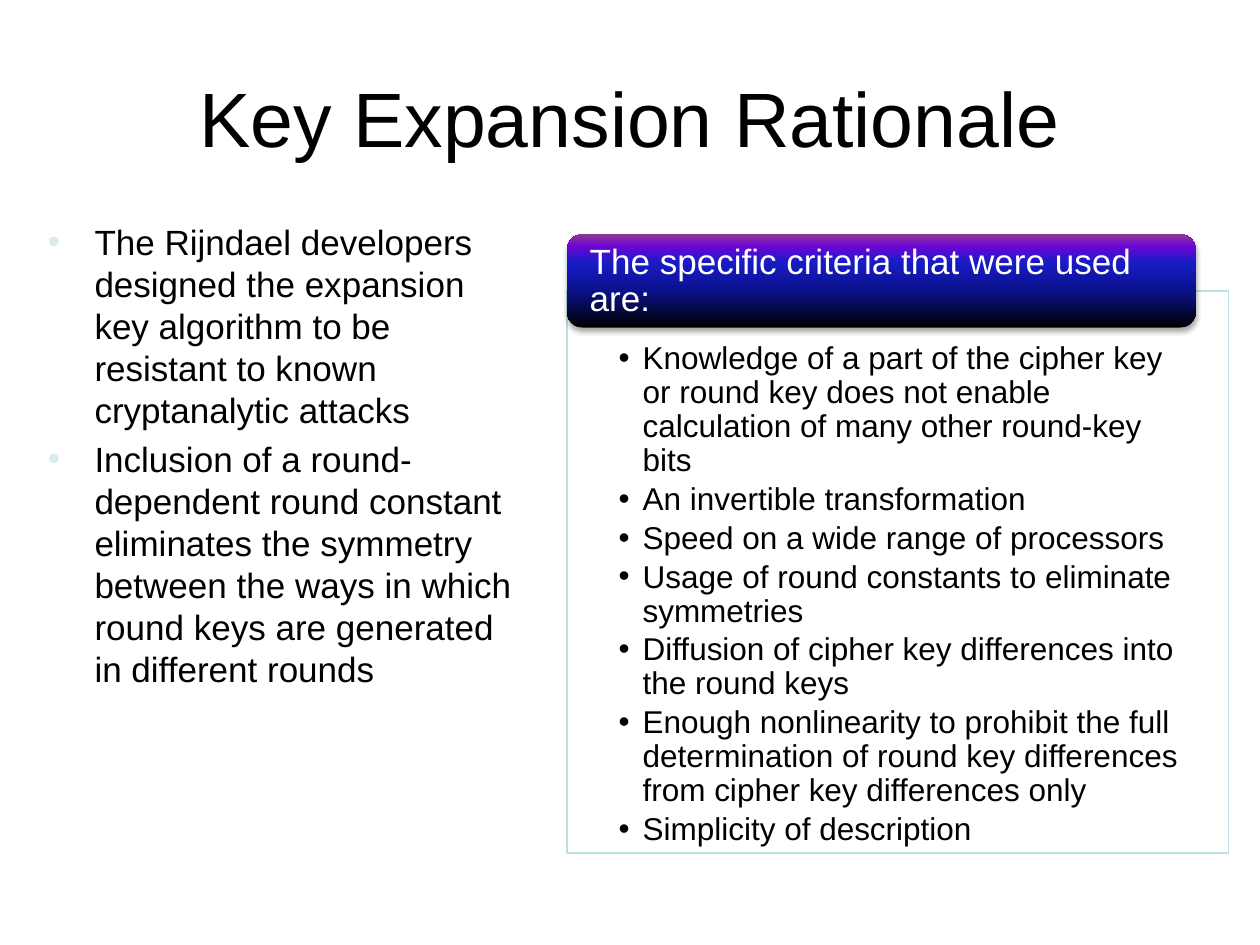
"""Build the Key Expansion Rationale slide."""
from dataclasses import dataclass
from typing import Optional

from lxml import etree
from pptx import Presentation
from pptx.dml.color import RGBColor
from pptx.enum.shapes import MSO_SHAPE
from pptx.enum.text import MSO_ANCHOR, MSO_AUTO_SIZE, PP_ALIGN
from pptx.oxml import parse_xml
from pptx.oxml.ns import qn
from pptx.util import Inches, Pt

RECT, ROUND = MSO_SHAPE.RECTANGLE, MSO_SHAPE.ROUNDED_RECTANGLE
TOP, MIDDLE = MSO_ANCHOR.TOP, MSO_ANCHOR.MIDDLE
LEFT, CENTER = PP_ALIGN.LEFT, PP_ALIGN.CENTER
NO_AUTOFIT = MSO_AUTO_SIZE.NONE
A_NS = "http://schemas.openxmlformats.org/drawingml/2006/main"


@dataclass(frozen=True)
class Theme:
    font: str = "Arial"
    text: str = "000000"
    light: str = "FFFFFF"
    bullet: str = "D6ECEE"
    border: str = "BBE0E3"
    header: tuple = ((0, "000000"), (40, "0A128C"), (70, "181CC7"),
                     (88, "7005D4"), (100, "8C3D91"))
    title_size: int = 44
    body_size: int = 20
    item_size: int = 18


@dataclass(frozen=True)
class Box:
    left: float
    top: float
    width: float
    height: float

    def lengths(self) -> tuple:
        """Return the position and size as lengths."""
        return tuple(map(Inches, (self.left, self.top, self.width, self.height)))


THEME = Theme()
TITLE_BOX = Box(0.5, 0.3, 9, 1.25)
BODY_BOX = Box(0.28, 1.7, 3.9, 5.08)
PANEL_BOX = Box(4.5, 2.31, 5.25, 4.46)
HEADER_BOX = Box(4.5, 1.86, 4.99, 0.74)
HEADER_TEXT_BOX = Box(4.54, 1.9, 4.92, 0.67)

POINTS = [
    "The Rijndael developers designed the expansion key algorithm to be "
    "resistant to known cryptanalytic attacks",
    "Inclusion of a round-dependent round constant eliminates the symmetry "
    "between the ways in which round keys are generated in different rounds",
]
CRITERIA = [
    "Knowledge of a part of the cipher key or round key does not enable "
    "calculation of many other round-key bits",
    "An invertible transformation",
    "Speed on a wide range of processors",
    "Usage of round constants to eliminate symmetries",
    "Diffusion of cipher key differences into the round keys",
    "Enough nonlinearity to prohibit the full determination of round key "
    "differences from cipher key differences only",
    "Simplicity of description",
]


def place(sp, box: Box) -> None:
    """Move and size a shape."""
    sp.left, sp.top, sp.width, sp.height = box.lengths()


def add_bullet(p, indent: float, color: str) -> None:
    """Give a paragraph a hanging round bullet."""
    pPr = p._p.get_or_add_pPr()
    pPr.set("marL", str(Inches(indent)))
    pPr.set("indent", str(-Inches(indent)))
    clr = etree.SubElement(pPr, qn("a:buClr"))
    etree.SubElement(clr, qn("a:srgbClr"), val=color)
    etree.SubElement(pPr, qn("a:buFont"), typeface=THEME.font)
    etree.SubElement(pPr, qn("a:buChar"), char="•")


def write(tf, paragraphs: list, *, size: int, color: str = THEME.text,
          align=LEFT, anchor=TOP, insets: tuple = (0.1, 0.05, 0.1, 0.05),
          indent: float = 0, bullet: Optional[str] = None, level: int = 0,
          gap: float = 0, spacing: float = 1) -> None:
    """Fill a text frame with paragraphs in one format."""
    tf.word_wrap, tf.auto_size, tf.vertical_anchor = True, NO_AUTOFIT, anchor
    (tf.margin_left, tf.margin_top,
     tf.margin_right, tf.margin_bottom) = map(Inches, insets)
    for i, text in enumerate(paragraphs):
        p = tf.add_paragraph() if i else tf.paragraphs[0]
        p.level = level
        if bullet:
            add_bullet(p, indent, bullet)
        p.alignment, p.line_spacing = align, spacing
        p.space_before = Pt(gap if i else 0)
        r = p.add_run()
        r.text = text
        r.font.name, r.font.size = THEME.font, Pt(size)
        r.font.color.rgb = RGBColor.from_string(color)


def add_panel(shapes, box: Box):
    """Draw the bordered, slightly transparent panel."""
    sp = shapes.add_shape(RECT, *box.lengths())
    sp.shadow.inherit = False
    sp.fill.solid()
    sp.fill.fore_color.rgb = RGBColor.from_string(THEME.light)
    clr = sp._element.spPr.find(qn("a:solidFill"))[0]
    etree.SubElement(clr, qn("a:alpha"), val="90000")
    sp.line.color.rgb = RGBColor.from_string(THEME.border)
    sp.line.width = Pt(0.75)
    return sp


def add_header(shapes, box: Box):
    """Draw the rounded header with its gradient and soft shadow."""
    sp = shapes.add_shape(ROUND, *box.lengths())
    sp.shadow.inherit = False
    sp.line.fill.background()
    stops = "".join(f'<a:gs pos="{pos * 1000}"><a:srgbClr val="{c}"/></a:gs>'
                    for pos, c in THEME.header)
    spPr = sp._element.spPr
    spPr.find(qn("a:prstGeom")).addnext(parse_xml(
        f'<a:gradFill xmlns:a="{A_NS}" rotWithShape="1"><a:gsLst>{stops}'
        '</a:gsLst><a:lin ang="16200000" scaled="0"/></a:gradFill>'))
    spPr.find(qn("a:effectLst")).append(parse_xml(
        f'<a:outerShdw xmlns:a="{A_NS}" blurRad="{Pt(3.1)}" dist="{Pt(1.8)}" '
        f'dir="5400000" rotWithShape="0"><a:srgbClr val="{THEME.text}">'
        '<a:alpha val="35000"/></a:srgbClr></a:outerShdw>'))
    return sp


def main() -> None:
    """Build and save the slide."""
    prs = Presentation()
    prs.slide_width, prs.slide_height = Inches(10), Inches(7.5)
    s = prs.slides.add_slide(prs.slide_layouts[1])
    title, body = s.shapes.title, s.placeholders[1]
    place(title, TITLE_BOX)
    write(title.text_frame, ["Key Expansion Rationale"],
          size=THEME.title_size, align=CENTER, anchor=MIDDLE)
    place(body, BODY_BOX)
    write(body.text_frame, POINTS, size=THEME.body_size, indent=0.37,
          bullet=THEME.bullet, gap=4)

    group = s.shapes.add_group_shape().shapes
    add_panel(group, PANEL_BOX)
    items = group.add_textbox(*PANEL_BOX.lengths())
    write(items.text_frame, CRITERIA, size=THEME.item_size,
          insets=(0.41, 0.41, 0.36, 0.14), indent=0.19, bullet=THEME.text,
          level=1, gap=2.7, spacing=0.9)
    add_header(group, HEADER_BOX)
    heading = group.add_textbox(*HEADER_TEXT_BOX.lengths())
    write(heading.text_frame, ["The specific criteria that were used are:"],
          size=THEME.body_size, color=THEME.light, anchor=MIDDLE,
          insets=(0.14, 0, 0.14, 0), spacing=0.9)
    prs.save("out.pptx")


if __name__ == "__main__":
    main()
